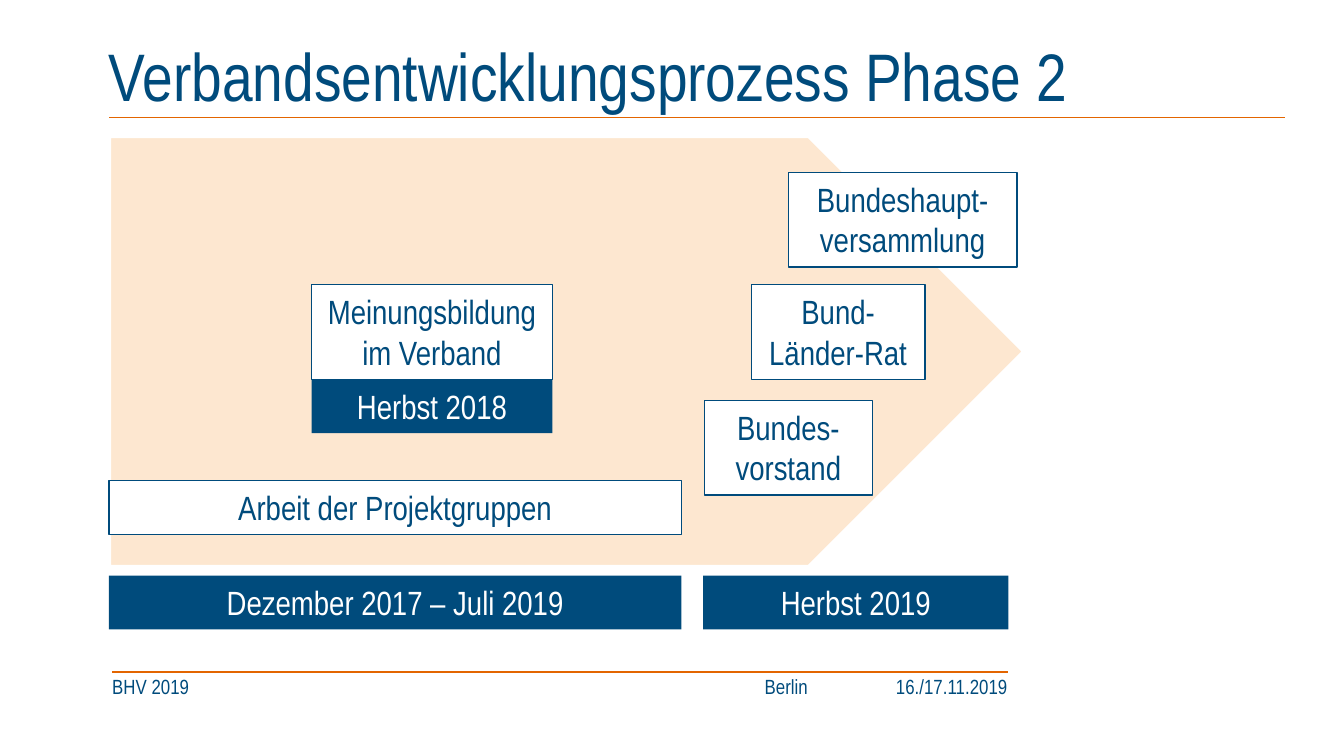
from dataclasses import dataclass

from lxml import etree
from pptx import Presentation
from pptx import util as u
from pptx.dml.color import RGBColor
from pptx.enum import shapes, text
from pptx.oxml.ns import qn


@dataclass(frozen=True)
class Theme:
    font: str = "Arial Narrow"
    blue: RGBColor = RGBColor(0x00, 0x4B, 0x7C)
    orange: RGBColor = RGBColor(0xE3, 0x65, 0x00)
    peach: RGBColor = RGBColor(0xFD, 0xE7, 0xD0)
    white: RGBColor = RGBColor(0xFF, 0xFF, 0xFF)
    title_size: int = 36
    label_size: int = 18
    footer_size: int = 11
    thin_line: float = 0.75
    arrow_line: float = 2.25


@dataclass(frozen=True)
class Box:
    left: float
    top: float
    width: float
    height: float

    def inside(self, left, top, width, height):
        return Box(self.left + left, self.top + top, width, height)

    def lengths(self):
        return [u.Cm(value) for value in (self.left, self.top, self.width, self.height)]


THEME = Theme()


def write(paragraph, words, size, color, alignment):
    paragraph.text = words
    paragraph.alignment = alignment
    paragraph.font.name = THEME.font
    paragraph.font.size = u.Pt(size)
    paragraph.font.color.rgb = color


def clear_margins(holder):
    holder.margin_left = holder.margin_right = 0
    holder.margin_top = holder.margin_bottom = 0


def clear_borders(cell):
    properties = cell._tc.get_or_add_tcPr()
    for position, side in enumerate(("a:lnL", "a:lnR", "a:lnT", "a:lnB")):
        border = etree.Element(qn(side), w="0")
        etree.SubElement(border, qn("a:noFill"))
        properties.insert(position, border)


def add_rule(slide, left, top, width):
    rule = slide.shapes.add_connector(
        shapes.MSO_CONNECTOR.STRAIGHT,
        u.Cm(left), u.Cm(top), u.Cm(left + width), u.Cm(top),
    )
    rule.line.color.rgb = THEME.orange
    rule.line.width = u.Pt(THEME.thin_line)
    etree.SubElement(rule._element.spPr, qn("a:effectLst"))


def add_filled_shape(slide, kind, box, fill, line=None, line_width=THEME.thin_line):
    shape = slide.shapes.add_shape(kind, *box.lengths())
    shape.shadow.inherit = False
    shape.fill.solid()
    shape.fill.fore_color.rgb = fill
    if line is None:
        shape.line.fill.background()
    else:
        shape.line.color.rgb = line
        shape.line.width = u.Pt(line_width)
    return shape


def add_label(slide, box, words, is_date):
    fill, color = (THEME.blue, THEME.white) if is_date else (THEME.white, THEME.blue)
    line = None if is_date else THEME.blue
    label = add_filled_shape(slide, shapes.MSO_SHAPE.RECTANGLE, box, fill, line)
    frame = label.text_frame
    frame.word_wrap = True
    frame.vertical_anchor = text.MSO_ANCHOR.TOP
    write(frame.paragraphs[0], words, THEME.label_size, color, text.PP_ALIGN.CENTER)


def add_title(slide, box):
    add_rule(slide, box.left, box.top + 1.44, 22.22)
    frame = slide.shapes.add_textbox(*box.lengths()).text_frame
    clear_margins(frame)
    frame.word_wrap = False
    frame.vertical_anchor = text.MSO_ANCHOR.MIDDLE
    paragraph = frame.paragraphs[0]
    write(paragraph, "Verbandsentwicklungsprozess Phase 2",
          THEME.title_size, THEME.blue, text.PP_ALIGN.LEFT)
    paragraph.line_spacing = u.Pt(THEME.title_size)


def add_process(slide, box):
    add_filled_shape(slide, shapes.MSO_SHAPE.PENTAGON, box,
                     THEME.peach, THEME.white, THEME.arrow_line)

    one_line, two_lines = 1.02, 1.79
    dates_top, opinion_top = 8.31, 2.81
    opinion_left, opinion_width = 3.83, 4.55
    project_width = 10.82

    dates = [
        ("Dezember 2017 – Juli 2019", 0, dates_top, project_width),
        ("Herbst 2018", opinion_left, opinion_top + two_lines, opinion_width),
        ("Herbst 2019", 11.23, dates_top, 5.77),
    ]
    steps = [
        ("Bundeshaupt-versammlung", 12.84, 0.69, 4.32, two_lines),
        ("Bund-Länder-Rat", 12.14, opinion_top, 3.28, two_lines),
        ("Bundes-vorstand", 11.25, 5, 3.18, two_lines),
        ("Arbeit der Projektgruppen", 0, 6.51, project_width, one_line),
        ("Meinungsbildung im Verband", opinion_left, opinion_top, opinion_width, two_lines),
    ]
    for words, left, top, width in dates:
        add_label(slide, box.inside(left, top, width, one_line), words, True)
    for words, left, top, width, height in steps:
        add_label(slide, box.inside(left, top, width, height), words, False)


def add_footer(slide, box):
    add_rule(slide, box.left, box.top, 16.93)
    columns = [
        ("BHV 2019", 11, text.PP_ALIGN.LEFT),
        ("", 0.99, text.PP_ALIGN.LEFT),
        ("Berlin", 1.5, text.PP_ALIGN.CENTER),
        ("", 0.08, text.PP_ALIGN.LEFT),
        ("16./17.11.2019", 3.33, text.PP_ALIGN.RIGHT),
    ]
    area = box.inside(0, 0.15, box.width, box.height - 0.15)
    table = slide.shapes.add_table(1, len(columns), *area.lengths()).table
    table.first_row = False
    table.horz_banding = False
    for index, (words, width, alignment) in enumerate(columns):
        table.columns[index].width = u.Cm(width)
        cell = table.cell(0, index)
        cell.fill.background()
        clear_borders(cell)
        clear_margins(cell)
        write(cell.text_frame.paragraphs[0], words,
              THEME.footer_size, THEME.blue, alignment)


def main():
    presentation = Presentation()
    presentation.slide_width = u.Cm(25.4)
    presentation.slide_height = u.Cm(14.29)
    slide = presentation.slides.add_slide(presentation.slide_layouts[6])
    add_title(slide, Box(2.06, 0.78, 22.86, 1.52))
    add_process(slide, Box(2.06, 2.57, 17.3, 8.15))
    add_footer(slide, Box(2.12, 12.7, 16.9, 0.63))
    presentation.save("out.pptx")


if __name__ == "__main__":
    main()
